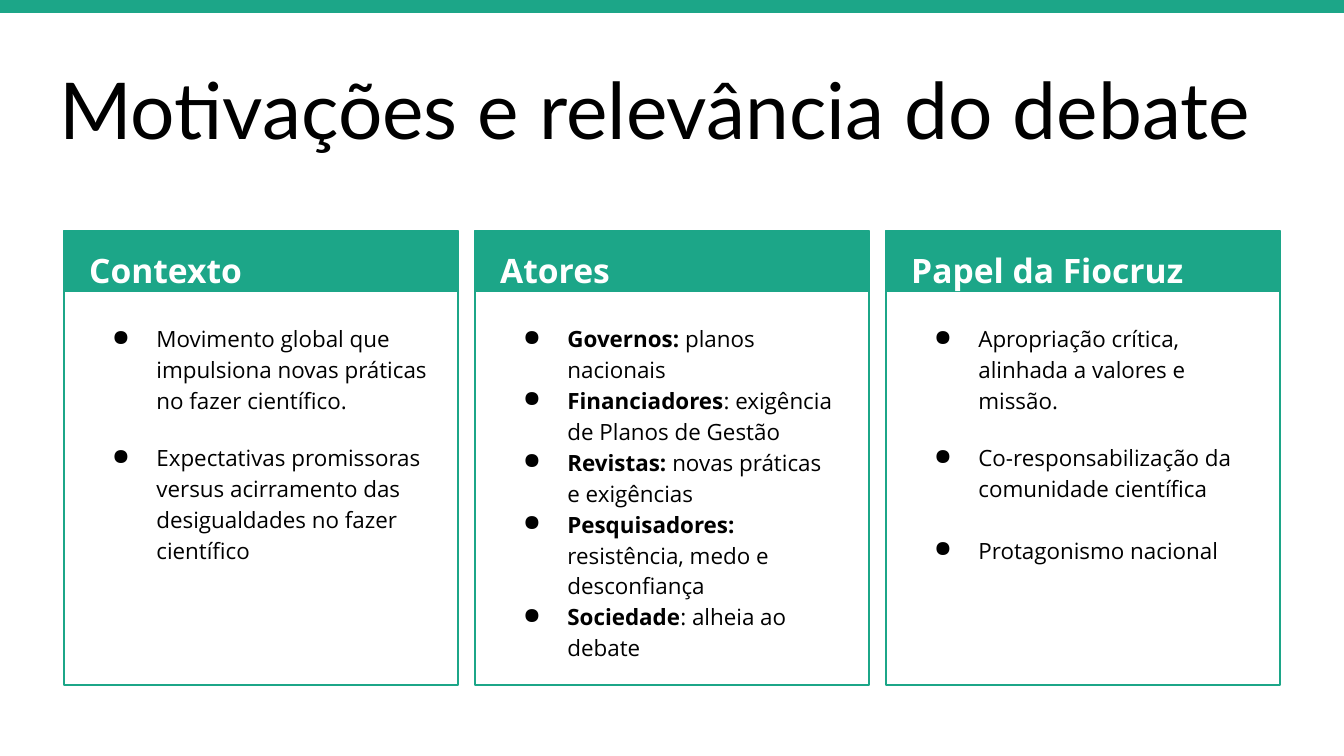
from lxml.etree import SubElement
from pptx import Presentation
from pptx.dml.color import RGBColor
from pptx.enum.shapes import MSO_SHAPE
from pptx.enum.text import MSO_ANCHOR
from pptx.oxml.ns import qn
from pptx.util import Inches, Pt

PX = 6804  # EMU in one px
GREEN, BLACK, WHITE = "1CA688", "000000", "FFFFFF"
TITLE = {"name": "Lato", "size": Pt(42)}
HEAD = {"name": "Open Sans", "size": Pt(18), "bold": True}
BODY = {"name": "Open Sans", "size": Pt(12)}

deck = Presentation()
deck.slide_width, deck.slide_height = 1344 * PX, 756 * PX
slide = deck.slides.add_slide(deck.slide_layouts[6])


def add_rect(left, top, width, height, fill=None, line=None):
    rect = slide.shapes.add_shape(
        MSO_SHAPE.RECTANGLE, left * PX, top * PX, width * PX, height * PX)
    rect.shadow.inherit = False
    if fill:
        rect.fill.solid()
        rect.fill.fore_color.rgb = RGBColor.from_string(fill)
    else:
        rect.fill.background()
    if line:
        rect.line.color.rgb = RGBColor.from_string(line)
        rect.line.width = Pt(0.75)
    else:
        rect.line.fill.background()


def add_text(left, top, width, height, paras, style, color,
             anchor=MSO_ANCHOR.TOP, lines=None, bullet=None):
    """Each para is (bold part, plain part, points of space after)."""
    box = slide.shapes.add_textbox(left * PX, top * PX, width * PX, height * PX)
    frame = box.text_frame
    frame.word_wrap = True
    frame.vertical_anchor = anchor
    for side in ("left", "right", "top", "bottom"):
        setattr(frame, f"margin_{side}", Inches(0.1))
    for num, (strong, plain, after) in enumerate(paras):
        para = frame.add_paragraph() if num else frame.paragraphs[0]
        para.space_after = Pt(after)
        if lines:
            para.line_spacing = lines
        if bullet:
            props = para._p.get_or_add_pPr()
            props.set("marL", str(Inches(0.5)))
            props.set("indent", str(-Inches(0.33)))
            SubElement(props, qn("a:buChar")).set("char", bullet)
        for words, bold in ((strong, True), (plain, False)):
            if words:
                run = para.add_run()
                run.text = words
                for key, value in {"bold": bold, **style}.items():
                    setattr(run.font, key, value)
                run.font.color.rgb = RGBColor.from_string(color)


# Title
add_text(46, 47, 1253, 122, [("", "Motivações e relevância do debate", 0)],
         TITLE, BLACK, anchor=MSO_ANCHOR.BOTTOM)

# Three cards
cards = [
    ("Contexto", [
        ("", "Movimento global que impulsiona novas práticas no fazer científico.", 14),
        ("", "Expectativas promissoras versus acirramento das desigualdades "
             "no fazer científico", 0),
    ]),
    ("Atores", [
        ("Governos:", " planos nacionais", 0),
        ("Financiadores", ": exigência de Planos de Gestão", 0),
        ("Revistas: ", "novas práticas e exigências", 0),
        ("Pesquisadores:", " resistência, medo e desconfiança", 0),
        ("Sociedade", ": alheia ao debate", 0),
    ]),
    ("Papel da Fiocruz", [
        ("", "Apropriação crítica, alinhada a valores e missão.", 14),
        ("", "Co-responsabilização da comunidade científica", 16.5),
        ("", "Protagonismo nacional", 0),
    ]),
]
for col, (name, points) in enumerate(cards):
    left = 64 + col * 411
    add_rect(left, 231, 394, 454, line=GREEN)
    add_rect(left, 231, 394, 60, fill=GREEN, line=GREEN)
    add_text(left + 12, 230, 366, 60, [("", name, 0)], HEAD, WHITE, lines=1.15)
    add_text(left + 12, 308, 366, 376, points, BODY, BLACK, lines=1.15, bullet="●")

# Top band
add_rect(0, 0, 1344, 13, fill=GREEN)

deck.save("out.pptx")
